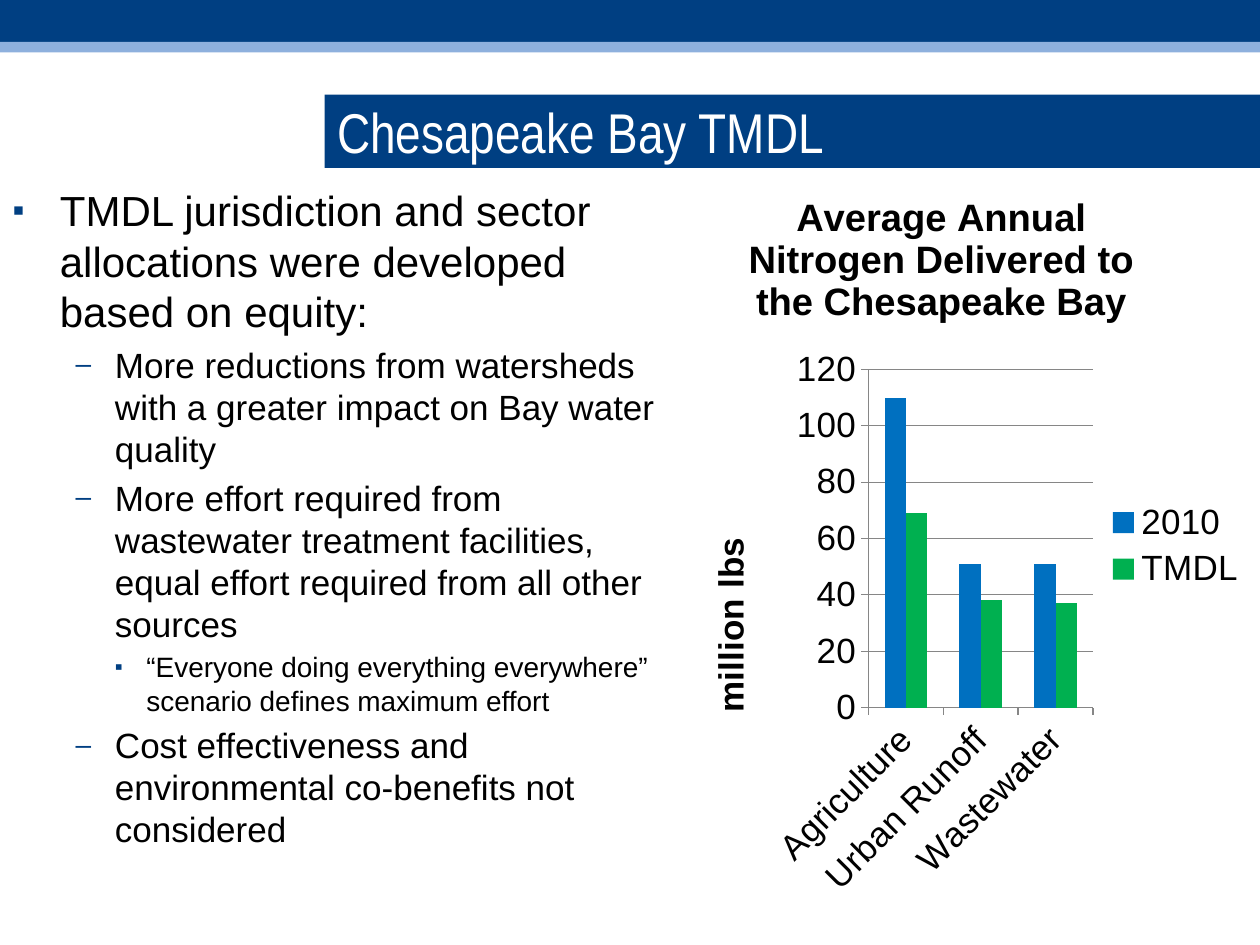
from lxml import etree
from pptx import Presentation
from pptx.chart.data import CategoryChartData
from pptx.dml.color import RGBColor
from pptx.enum import chart as charts, shapes, text
from pptx.oxml import parse_xml
from pptx.oxml.ns import nsdecls, qn
from pptx.util import Pt

NAVY = RGBColor(0x00, 0x3F, 0x82)
SKY = RGBColor(0x8E, 0xB0, 0xDD)
WHITE = RGBColor(0xFF, 0xFF, 0xFF)
BLACK = RGBColor(0, 0, 0)
GRID = RGBColor(0x86, 0x86, 0x86)
BLUE = RGBColor(0x00, 0x70, 0xC0)
GREEN = RGBColor(0x00, 0xB0, 0x50)

# Per outline level: text size, left indent, hanging indent, bullet
LEVELS = [(24, 27, 27, "▪"), (20, 58.5, 22.5, "–"), (16, 76.5, 18, "▪")]

POINTS = [
    (0, "TMDL jurisdiction and sector allocations were developed based on equity:"),
    (1, "More reductions from watersheds with a greater impact on Bay water quality"),
    (1, "More effort required from wastewater treatment facilities, equal effort "
        "required from all other sources"),
    (2, "“Everyone doing everything everywhere” scenario defines maximum effort"),
    (1, "Cost effectiveness and environmental co-benefits not considered"),
]


def place(shape, box):
    shape.left, shape.top, shape.width, shape.height = (Pt(v) for v in box)


def style_font(font, size, color=BLACK, name="Arial", bold=False):
    font.size, font.name, font.bold = Pt(size), name, bold
    font.color.rgb = color


def add_header(slide, box):
    """Navy band above a thin sky-blue one."""
    left, top, width, height = box
    navy_height = height * 0.8
    bands = [(top, navy_height, NAVY), (top + navy_height, height - navy_height, SKY)]
    for band_top, band_height, color in bands:
        band = slide.shapes.add_shape(
            shapes.MSO_SHAPE.RECTANGLE,
            Pt(left), Pt(band_top), Pt(width), Pt(band_height))
        band.shadow.inherit = False
        band.fill.solid()
        band.fill.fore_color.rgb = color
        band.line.fill.background()


def fill_title(slide, box):
    heading = slide.shapes.title
    place(heading, box)
    heading.fill.solid()
    heading.fill.fore_color.rgb = NAVY
    frame = heading.text_frame
    frame.word_wrap = True
    frame.auto_size = text.MSO_AUTO_SIZE.NONE
    frame.vertical_anchor = text.MSO_ANCHOR.MIDDLE
    line = frame.paragraphs[0]
    line.alignment = text.PP_ALIGN.LEFT
    run = line.add_run()
    run.text = "Chesapeake Bay TMDL"
    style_font(run.font, 32, WHITE, "Arial Narrow")


def set_bullet(paragraph, left, hanging, mark):
    props = paragraph._p.get_or_add_pPr()
    props.set("marL", str(Pt(left)))
    props.set("indent", str(-Pt(hanging)))
    color = etree.SubElement(props, qn("a:buClr"))
    etree.SubElement(color, qn("a:srgbClr"), val=str(NAVY))
    etree.SubElement(props, qn("a:buSzPct"), val="80000")
    etree.SubElement(props, qn("a:buFont"), typeface="Arial")
    etree.SubElement(props, qn("a:buChar"), char=mark)


def fill_points(slide, box):
    body = slide.placeholders[1]
    place(body, box)
    frame = body.text_frame
    frame.word_wrap = True
    frame.auto_size = text.MSO_AUTO_SIZE.NONE
    frame.vertical_anchor = text.MSO_ANCHOR.TOP
    for i, (level, wording) in enumerate(POINTS):
        size, left, hanging, mark = LEVELS[level]
        point = frame.add_paragraph() if i else frame.paragraphs[0]
        point.level = level
        point.alignment = text.PP_ALIGN.LEFT
        point.line_spacing = 1.0
        point.space_before = Pt(size * 0.2)
        set_bullet(point, left, hanging, mark)
        run = point.add_run()
        run.text = wording
        style_font(run.font, size)


def set_layout(parent, index, target=None, **fractions):
    """Place a chart part by fractions of the chart's size."""
    for old in parent.findall(qn("c:layout")):
        parent.remove(old)
    layout = parse_xml(f"<c:layout {nsdecls('c')}><c:manualLayout/></c:layout>")
    manual = layout[0]
    if target:
        etree.SubElement(manual, qn("c:layoutTarget"), val=target)
    for mode in ("xMode", "yMode"):
        etree.SubElement(manual, qn(f"c:{mode}"), val="edge")
    for key, value in fractions.items():
        etree.SubElement(manual, qn(f"c:{key}"), val=str(value))
    parent.insert(index, layout)


def write_chart_title(title, wording, size, x, y):
    run = title.text_frame.paragraphs[0].add_run()
    run.text = wording
    style_font(run.font, size, bold=True)
    set_layout(title._element, 1, x=x, y=y)


def add_nitrogen_chart(slide, box):
    data = CategoryChartData(number_format="0")
    data.categories = ["Agriculture", "Urban Runoff", "Wastewater"]
    data.add_series("2010", [110, 51, 51])
    data.add_series("TMDL", [69, 38, 37])
    chart = slide.shapes.add_chart(
        charts.XL_CHART_TYPE.COLUMN_CLUSTERED, *(Pt(v) for v in box), data).chart
    style_font(chart.font, 10)
    chart.has_title = True
    write_chart_title(chart.chart_title,
                      "Average Annual Nitrogen Delivered to the Chesapeake Bay",
                      21.8, 0.1, 0.01)

    # Columns
    plot = chart.plots[0]
    plot.vary_by_categories = False
    plot.gap_width, plot.overlap = 150, 0
    for series, color in zip(plot.series, (BLUE, GREEN)):
        series.format.fill.solid()
        series.format.fill.fore_color.rgb = color
    set_layout(chart._chartSpace.chart.plotArea, 0, "inner",
               x=0.32, y=0.26, w=0.39, h=0.46)

    # Axes
    sectors, pounds = chart.category_axis, chart.value_axis
    for axis in (sectors, pounds):
        style_font(axis.tick_labels.font, 20)
        axis.format.line.color.rgb = GRID
        axis.major_tick_mark = charts.XL_TICK_MARK.OUTSIDE
    label_body = sectors._element.find(qn("c:txPr")).find(qn("a:bodyPr"))
    label_body.set("rot", "-2700000")
    pounds.minimum_scale, pounds.maximum_scale, pounds.major_unit = 0, 120, 20
    pounds.tick_labels.number_format = "0"
    pounds.tick_labels.number_format_is_linked = False
    pounds.has_major_gridlines = True
    pounds.major_gridlines.format.line.color.rgb = GRID
    pounds.has_title = True
    write_chart_title(pounds.axis_title, "million lbs", 20, 0.03, 0.48)
    pounds.axis_title.text_frame._txBody.find(qn("a:bodyPr")).set("rot", "-5400000")

    # Legend
    chart.has_legend = True
    chart.legend.position = charts.XL_LEGEND_POSITION.RIGHT
    chart.legend.include_in_layout = False
    style_font(chart.legend.font, 20)


def main():
    deck = Presentation()
    deck.slide_width, deck.slide_height = Pt(720), Pt(540)
    slide = deck.slides.add_slide(deck.slide_layouts[1])
    add_header(slide, (0, 0, 720, 30))
    fill_title(slide, (185.5, 54, 534.5, 42))
    fill_points(slide, (0, 102, 390, 426))
    add_nitrogen_chart(slide, (391, 102, 329, 420))
    deck.save("out.pptx")


if __name__ == "__main__":
    main()
